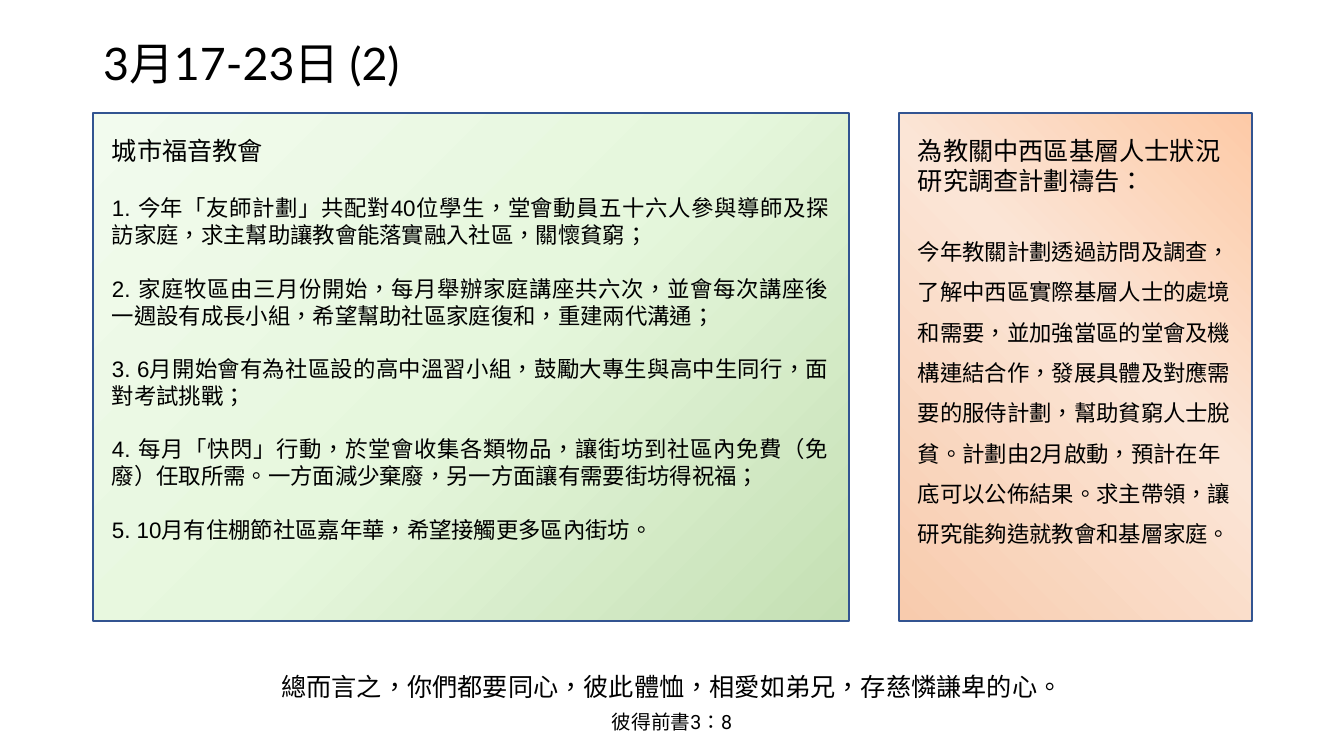
from copy import deepcopy

from pptx import Presentation
from pptx.dml.color import RGBColor
from pptx.enum.lang import MSO_LANGUAGE_ID as LANG
from pptx.enum.shapes import MSO_SHAPE as SHAPE
from pptx.enum.text import MSO_ANCHOR as ANCHOR, MSO_AUTO_SIZE as AUTO_SIZE, PP_ALIGN as ALIGN
from pptx.oxml.ns import qn
from pptx.util import Pt

PX = 914400 / 100.8


def box(*lengths):
    return [round(length * PX) for length in lengths]


def color(value):
    return RGBColor.from_string(value)


presentation = Presentation()
presentation.slide_width, presentation.slide_height = box(1344, 756)
slide = presentation.slides.add_slide(presentation.slide_layouts[5])

panels = [
    (93, 756, 135, [(0, "C5E0B4"), (0.5, "E6F7DD"), (1, "F2FBEE")]),
    (899, 353, 45, [(0, "F8CBAD"), (0.57, "FBE5D6"), (1, "FDCAA7")]),
]
for left, width, angle, stops in panels:
    panel = slide.shapes.add_shape(SHAPE.RECTANGLE, *box(left, 113, width, 508))
    panel.shadow.inherit = False
    panel.line.color.rgb = color("325491")
    panel.line.width = Pt(1)
    panel.fill.gradient()
    panel.fill.gradient_angle = angle
    stop_list = panel.element.spPr.find(qn("a:gradFill")).find(qn("a:gsLst"))
    stop_list.append(deepcopy(stop_list[0]))
    for stop, (position, value) in zip(panel.fill.gradient_stops, stops):
        stop.position = position
        stop.color.rgb = color(value)

title = slide.shapes.title
title.left, title.top, title.width, title.height = box(93, 30, 661, 73)
title.text_frame.text = "3月17-23日 (2)"
title.text_frame.auto_size = AUTO_SIZE.NONE
title.text_frame.word_wrap = True
title.text_frame.vertical_anchor = ANCHOR.MIDDLE
heading = title.text_frame.paragraphs[0]
heading.alignment = ALIGN.LEFT
heading.line_spacing = 0.9
heading.font.name = "Lato"
heading.font.size = Pt(32)
heading.font.color.rgb = color("000000")

church_items = [
    "1. 今年「友師計劃」共配對40位學生，堂會動員五十六人參與導師及探訪家庭，求主幫助讓教會能落實融入社區，關懷貧窮；",
    "2. 家庭牧區由三月份開始，每月舉辦家庭講座共六次，並會每次講座後一週設有成長小組，希望幫助社區家庭復和，重建兩代溝通；",
    "3. 6月開始會有為社區設的高中溫習小組，鼓勵大專生與高中生同行，面對考試挑戰；",
    "4. 每月「快閃」行動，於堂會收集各類物品，讓街坊到社區內免費（免廢）任取所需。一方面減少棄廢，另一方面讓有需要街坊得祝福；",
    "5. 10月有住棚節社區嘉年華，希望接觸更多區內街坊。",
]
research_prayer = (
    "今年教關計劃透過訪問及調查，了解中西區實際基層人士的處境和需要，"
    "並加強當區的堂會及機構連結合作，發展具體及對應需要的服侍計劃，幫助貧窮人士脫貧。"
    "計劃由2月啟動，預計在年底可以公佈結果。求主帶領，讓研究能夠造就教會和基層家庭。"
)
verse = "總而言之，你們都要同心，彼此體恤，相愛如弟兄，存慈憐謙卑的心。"

texts = [
    (box(102, 130, 737, 424), ANCHOR.TOP, "Arial", ALIGN.JUSTIFY, 1, 16, 21, 19,
     ["城市福音教會", *church_items]),
    (box(908, 130, 334, 422), ANCHOR.TOP, "Arial", ALIGN.LEFT, 1.5, 16, 21, 0,
     ["為教關中西區基層人士狀況研究調查計劃禱告：", research_prayer]),
    (box(213, 665, 918, 73), ANCHOR.BOTTOM, "Roboto", ALIGN.CENTER, 1, 14, 6, 0,
     [verse, "彼得前書3：8"]),
]
for place, anchor, font, alignment, spacing, size, lead_gap, item_gap, lines in texts:
    frame = slide.shapes.add_textbox(*place).text_frame
    frame.word_wrap = True
    frame.auto_size = AUTO_SIZE.SHAPE_TO_FIT_TEXT
    frame.vertical_anchor = anchor
    for index, line in enumerate(lines):
        paragraph = frame.paragraphs[0] if index == 0 else frame.add_paragraph()
        paragraph.text = line
        is_lead = index == 0
        paragraph.alignment = ALIGN.LEFT if is_lead and alignment == ALIGN.JUSTIFY else alignment
        paragraph.line_spacing = 1.0 if is_lead else float(spacing)
        paragraph.space_after = Pt(lead_gap if is_lead else item_gap if index < len(lines) - 1 else 0)
        paragraph.font.name = font
        paragraph.font.size = Pt(18 if is_lead else size)
        paragraph.font.color.rgb = color("000000")
        paragraph.font.language_id = LANG.CHINESE_HONG_KONG_SAR

presentation.save("out.pptx")
